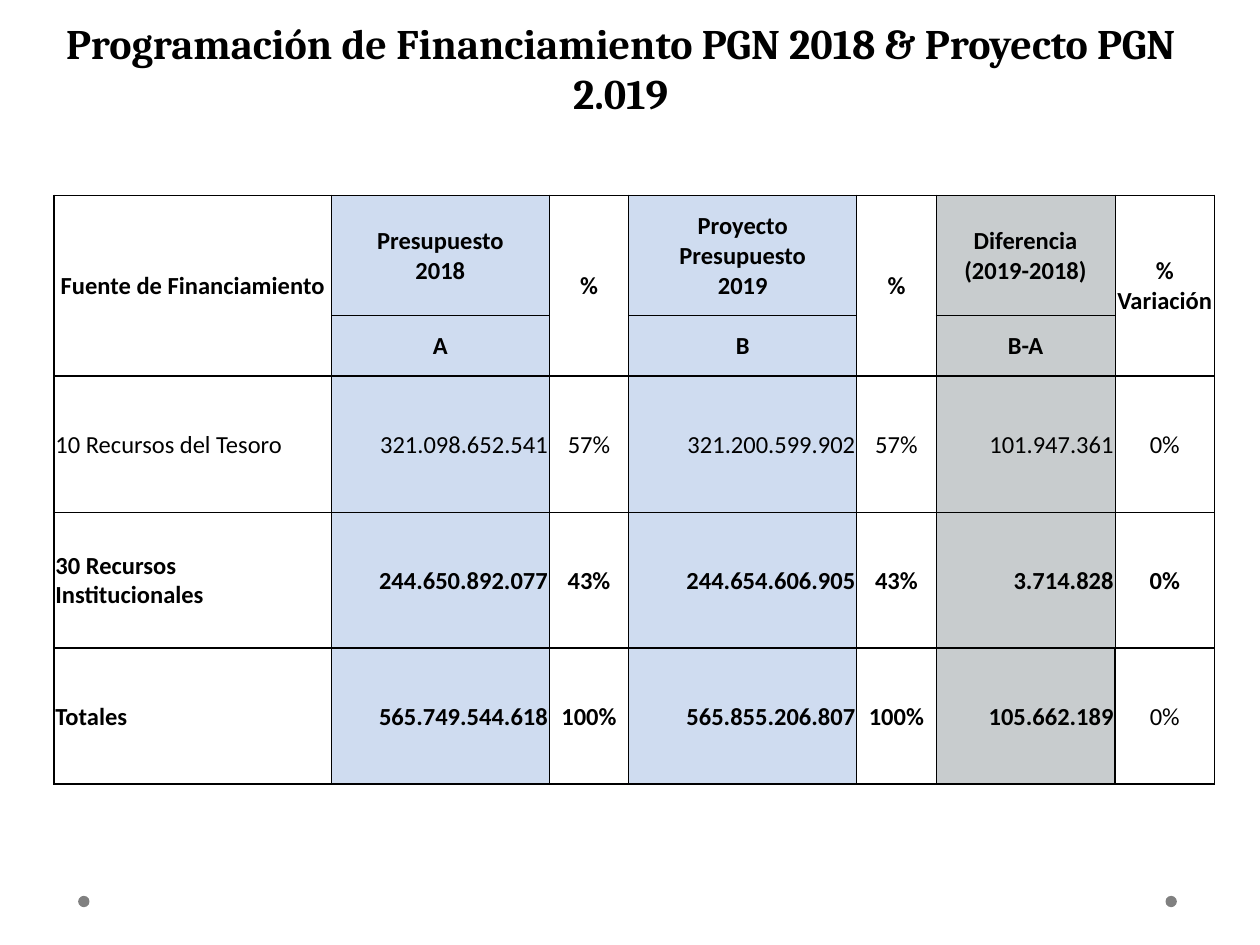
from dataclasses import dataclass

from lxml.etree import SubElement
from pptx import Presentation
from pptx.dml.color import RGBColor
from pptx.enum.shapes import MSO_SHAPE as Preset
from pptx.enum.text import MSO_ANCHOR as Anchor, PP_ALIGN as Align
from pptx.oxml.ns import qn
from pptx.util import Inches, Pt


@dataclass(frozen=True)
class Theme:
    text: str = "000000"
    budget: str = "CFDCF0"
    difference: str = "C8CCCE"
    dot: str = "808080"
    title_font: str = "Cambria"
    table_font: str = "Calibri"
    title_size: int = 24
    table_size: int = 14
    thin: float = 0.5
    thick: float = 1


theme = Theme()

# Content
TITLE = "Programación de Financiamiento PGN 2018 & Proyecto PGN 2.019"
ROWS = [
    ["Fuente de Financiamiento", "Presupuesto\n2018", "%",
     "Proyecto\vPresupuesto\n2019", "%", "Diferencia\n(2019-2018)", "% Variación"],
    ["", "A", "", "B", "", "B-A", ""],
    ["10 Recursos del Tesoro", "321.098.652.541", "57%",
     "321.200.599.902", "57%", "101.947.361", "0%"],
    ["30 Recursos Institucionales", "244.650.892.077", "43%",
     "244.654.606.905", "43%", "3.714.828", "0%"],
    ["Totales", "565.749.544.618", "100%",
     "565.855.206.807", "100%", "105.662.189", "0%"],
]
HEADER_ROWS = 2
TOTAL_ROW = len(ROWS) - 1
LAST_COLUMN = len(ROWS[0]) - 1
COLUMN_WIDTHS = [2.2, 1.73, 0.63, 1.81, 0.63, 1.42, 0.79]
ROW_HEIGHTS = [0.95, 0.45, 1.08, 1.08, 1.08]
COLUMN_FILLS = {1: theme.budget, 3: theme.budget, 5: theme.difference}
MERGED_COLUMNS = [0, 2, 4, 6]
BODY_ALIGN = [Align.LEFT, Align.RIGHT, Align.CENTER, Align.RIGHT,
              Align.CENTER, Align.RIGHT, Align.CENTER]
THICK_RULES = {0, HEADER_ROWS, TOTAL_ROW, len(ROWS)}


def format_text(text_frame, font_name, size, bold, alignment):
    for paragraph in text_frame.paragraphs:
        paragraph.alignment = alignment
        for run in paragraph.runs:
            run.font.name = font_name
            run.font.size = Pt(size)
            run.font.bold = bold
            run.font.color.rgb = RGBColor.from_string(theme.text)


def is_bold(row, column):
    plain_total = row == TOTAL_ROW and column == LAST_COLUMN
    return row != HEADER_ROWS and not plain_total


def border_widths(row, column):
    """Thick rules frame the table, the header and the totals."""
    def vertical(edge):
        outer = edge in (0, LAST_COLUMN + 1)
        total = row == TOTAL_ROW and edge == LAST_COLUMN
        return theme.thick if outer or total else theme.thin

    def horizontal(edge):
        return theme.thick if edge in THICK_RULES else theme.thin

    return {"a:lnL": vertical(column), "a:lnR": vertical(column + 1),
            "a:lnT": horizontal(row), "a:lnB": horizontal(row + 1)}


def draw_borders(cell, widths):
    properties = cell._tc.get_or_add_tcPr()
    for index, (tag, width) in enumerate(widths.items()):
        line = properties.makeelement(qn(tag), {"w": str(Pt(width))})
        fill = SubElement(line, qn("a:solidFill"))
        SubElement(fill, qn("a:srgbClr"), val=theme.text)
        properties.insert(index, line)


def add_title(slide):
    title = slide.shapes.title
    title.left, title.top = Inches(0.2), Inches(0.28)
    title.width, title.height = Inches(9.45), Inches(0.71)
    title.text_frame.text = TITLE
    title.text_frame.word_wrap = True
    title.text_frame.vertical_anchor = Anchor.BOTTOM
    format_text(title.text_frame, theme.title_font, theme.title_size, True, Align.CENTER)


def add_budget_table(slide):
    table = slide.shapes.add_table(
        len(ROWS), len(COLUMN_WIDTHS), Inches(0.43), Inches(1.55),
        Inches(sum(COLUMN_WIDTHS)), Inches(sum(ROW_HEIGHTS))).table
    table.first_row = table.horz_banding = False
    for column, width in zip(table.columns, COLUMN_WIDTHS):
        column.width = Inches(width)
    for row, height in zip(table.rows, ROW_HEIGHTS):
        row.height = Inches(height)

    for r, values in enumerate(ROWS):
        for c, value in enumerate(values):
            cell = table.cell(r, c)
            cell.margin_left = cell.margin_right = cell.margin_top = Inches(0.01)
            cell.margin_bottom = 0
            cell.vertical_anchor = Anchor.MIDDLE
            if c in COLUMN_FILLS:
                cell.fill.solid()
                cell.fill.fore_color.rgb = RGBColor.from_string(COLUMN_FILLS[c])
            else:
                cell.fill.background()
            draw_borders(cell, border_widths(r, c))
            if value:
                cell.text_frame.text = value
                alignment = Align.CENTER if r < HEADER_ROWS else BODY_ALIGN[c]
                format_text(cell.text_frame, theme.table_font, theme.table_size,
                            is_bold(r, c), alignment)
    for c in MERGED_COLUMNS:
        table.cell(0, c).merge(table.cell(HEADER_ROWS - 1, c))


def add_footer_dots(slide):
    for left in (0.62, 9.25):
        dot = slide.shapes.add_shape(
            Preset.OVAL, Inches(left), Inches(7.11), Inches(0.09), Inches(0.09))
        dot.shadow.inherit = False
        dot.fill.solid()
        dot.fill.fore_color.rgb = RGBColor.from_string(theme.dot)
        dot.line.fill.background()


def main():
    presentation = Presentation()
    presentation.slide_width, presentation.slide_height = Inches(10), Inches(7.5)
    slide = presentation.slides.add_slide(presentation.slide_layouts[5])
    add_footer_dots(slide)
    add_title(slide)
    add_budget_table(slide)
    presentation.save("out.pptx")


if __name__ == "__main__":
    main()
